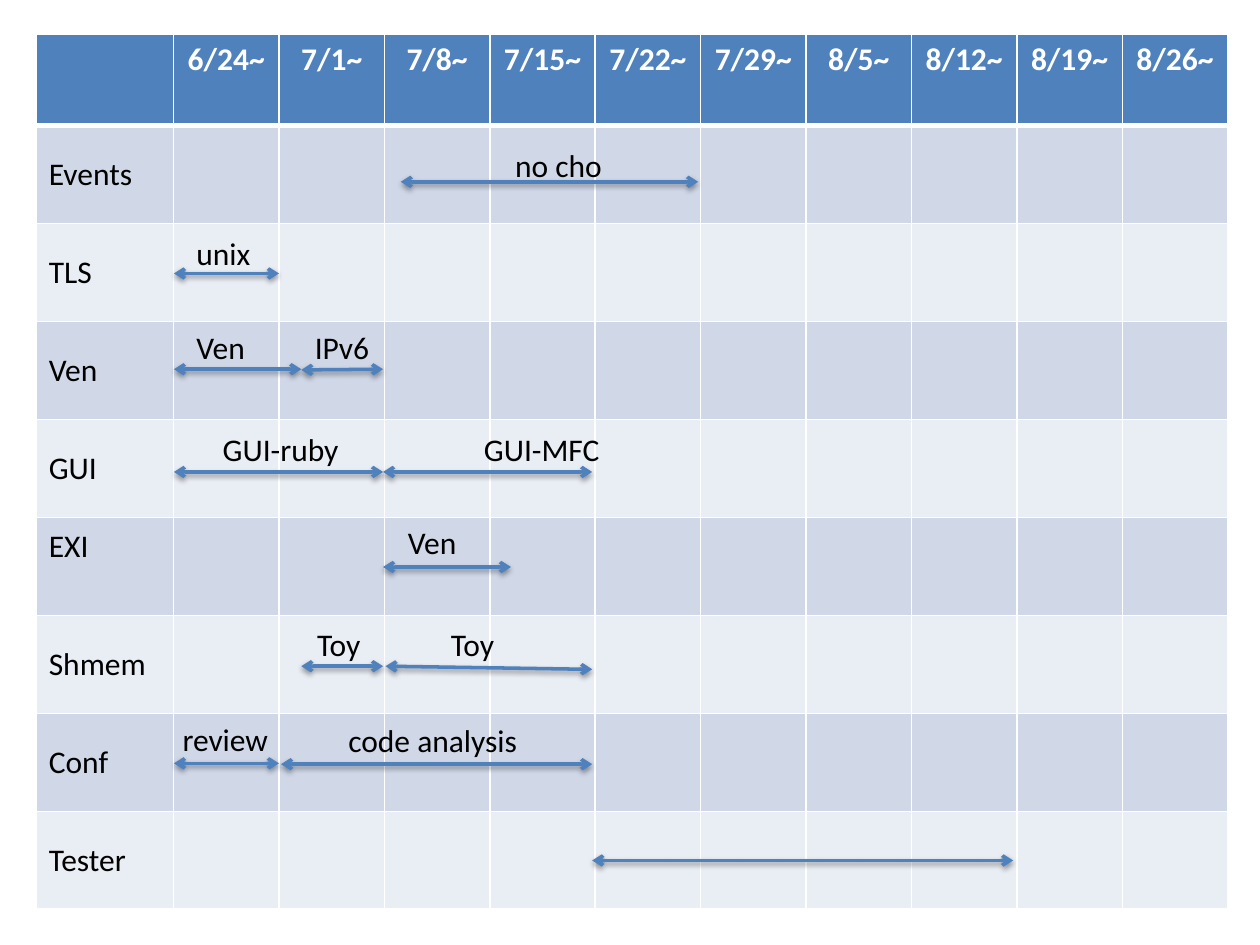
from lxml import etree
from pptx import Presentation
from pptx.dml.color import RGBColor
from pptx.enum.shapes import MSO_CONNECTOR
from pptx.enum.text import MSO_ANCHOR, MSO_AUTO_SIZE, PP_ALIGN
from pptx.oxml import parse_xml
from pptx.oxml.ns import qn
from pptx.util import Pt

STRAIGHT = MSO_CONNECTOR.STRAIGHT
MIDDLE, TOP = MSO_ANCHOR.MIDDLE, MSO_ANCHOR.TOP
CENTER, LEFT = PP_ALIGN.CENTER, PP_ALIGN.LEFT
GROW = MSO_AUTO_SIZE.SHAPE_TO_FIT_TEXT

BLUE, WHITE, BLACK = "4F81BD", "FFFFFF", "000000"
BANDS = ["E9EDF4", "D0D8E8"]
DRAWING = "http://schemas.openxmlformats.org/drawingml/2006/main"


def color(value):
    return RGBColor.from_string(value)


def add_run(paragraph, text, text_color, bold=False):
    run = paragraph.add_run()
    run.text = text
    run.font.name = "Calibri"
    run.font.size = Pt(18)
    run.font.bold = bold
    run.font.color.rgb = color(text_color)


presentation = Presentation()
presentation.slide_width = Pt(720)
presentation.slide_height = Pt(540)
slide = presentation.slides.add_slide(presentation.slide_layouts[6])

# Schedule table: weeks across, tasks down
weeks = ["6/24~", "7/1~", "7/8~", "7/15~", "7/22~", "7/29~",
         "8/5~", "8/12~", "8/19~", "8/26~"]
tasks = ["Events", "TLS", "Ven", "GUI", "EXI", "Shmem", "Conf", "Tester"]
table = slide.shapes.add_table(len(tasks) + 1, len(weeks) + 1,
                               Pt(20.7), Pt(19.7), Pt(681), Pt(500)).table
for index, column in enumerate(table.columns):
    column.width = Pt(60.25 if index else 78.5)
for index, row in enumerate(table.rows):
    row.height = Pt(56 if index else 52)

for row_index in range(len(tasks) + 1):
    is_header = row_index == 0
    for column_index in range(len(weeks) + 1):
        cell = table.cell(row_index, column_index)

        # White borders, thicker under the header
        properties = cell._tc.get_or_add_tcPr()
        widths = {"lnL": 1, "lnR": 1,
                  "lnT": 3 if row_index == 1 else 1,
                  "lnB": 3 if is_header else 1}
        for side, width in widths.items():
            border = etree.SubElement(properties, qn("a:" + side), w=str(Pt(width)))
            border_fill = etree.SubElement(border, qn("a:solidFill"))
            etree.SubElement(border_fill, qn("a:srgbClr"), val=WHITE)

        cell.fill.solid()
        cell.fill.fore_color.rgb = color(BLUE if is_header else BANDS[row_index % 2])
        cell.vertical_anchor = TOP if is_header else MIDDLE
        paragraph = cell.text_frame.paragraphs[0]
        paragraph.alignment = CENTER if is_header else LEFT
        if is_header and column_index:
            add_run(paragraph, weeks[column_index - 1], WHITE, bold=True)
        elif column_index == 0 and not is_header:
            add_run(paragraph, tasks[row_index - 1], BLACK)

# The EXI name sits higher than the others
table.cell(tasks.index("EXI") + 1, 0).margin_bottom = Pt(25.6)

# Bars: start x, start y, end x, end y
bars = [
    (229, 103.9, 399, 103.9),
    (99.4, 156.3, 159.4, 156.3),
    (99.4, 211, 172.2, 211),
    (172.2, 211.4, 218.9, 211),
    (99.4, 269.7, 218.9, 269.7),
    (218.9, 269.7, 338.4, 269.7),
    (218.9, 324, 292, 324),
    (172.2, 380.7, 218.9, 380.7),
    (220.3, 380.7, 338.4, 382.5),
    (99.4, 436.2, 159.4, 436.2),
    (160.6, 436.7, 338.4, 436.7),
    (338.4, 491.7, 579, 491.7),
]
for start_x, start_y, end_x, end_y in bars:
    connector = slide.shapes.add_connector(
        STRAIGHT, Pt(start_x), Pt(start_y), Pt(end_x), Pt(end_y))
    connector.line.color.rgb = color(BLUE)
    connector.line.width = Pt(2)
    line = connector.line._get_or_add_ln()
    for end in ("headEnd", "tailEnd"):
        etree.SubElement(line, qn("a:" + end), type="arrow")
    connector._element.spPr.append(parse_xml(
        f'<a:effectLst xmlns:a="{DRAWING}">'
        f'<a:outerShdw blurRad="{Pt(3.1)}" dist="{Pt(1.6)}" dir="5400000" rotWithShape="0">'
        f'<a:srgbClr val="{BLACK}"><a:alpha val="38000"/></a:srgbClr>'
        '</a:outerShdw></a:effectLst>'))

# Bar labels: text, left, top, width
labels = [
    ("no cho", 287.3, 80.1, 64.8),
    ("unix", 105.1, 130.3, 46.1),
    ("Ven", 105.1, 183.8, 44.6),
    ("IPv6", 172.8, 183.8, 46.1),
    ("GUI-ruby", 120.2, 242.1, 81.4),
    ("GUI-MFC", 269.5, 242.1, 82.1),
    ("Ven", 226, 295.2, 44.6),
    ("Toy", 174.2, 353.5, 41),
    ("Toy", 250.6, 353.5, 41),
    ("review", 97.2, 407.7, 64.1),
    ("code analysis", 192, 408.6, 112.3),
]
for text, left, top, width in labels:
    label = slide.shapes.add_textbox(Pt(left), Pt(top), Pt(width), Pt(29))
    label.text_frame.word_wrap = False
    label.text_frame.auto_size = GROW
    add_run(label.text_frame.paragraphs[0], text, BLACK)

presentation.save("out.pptx")
